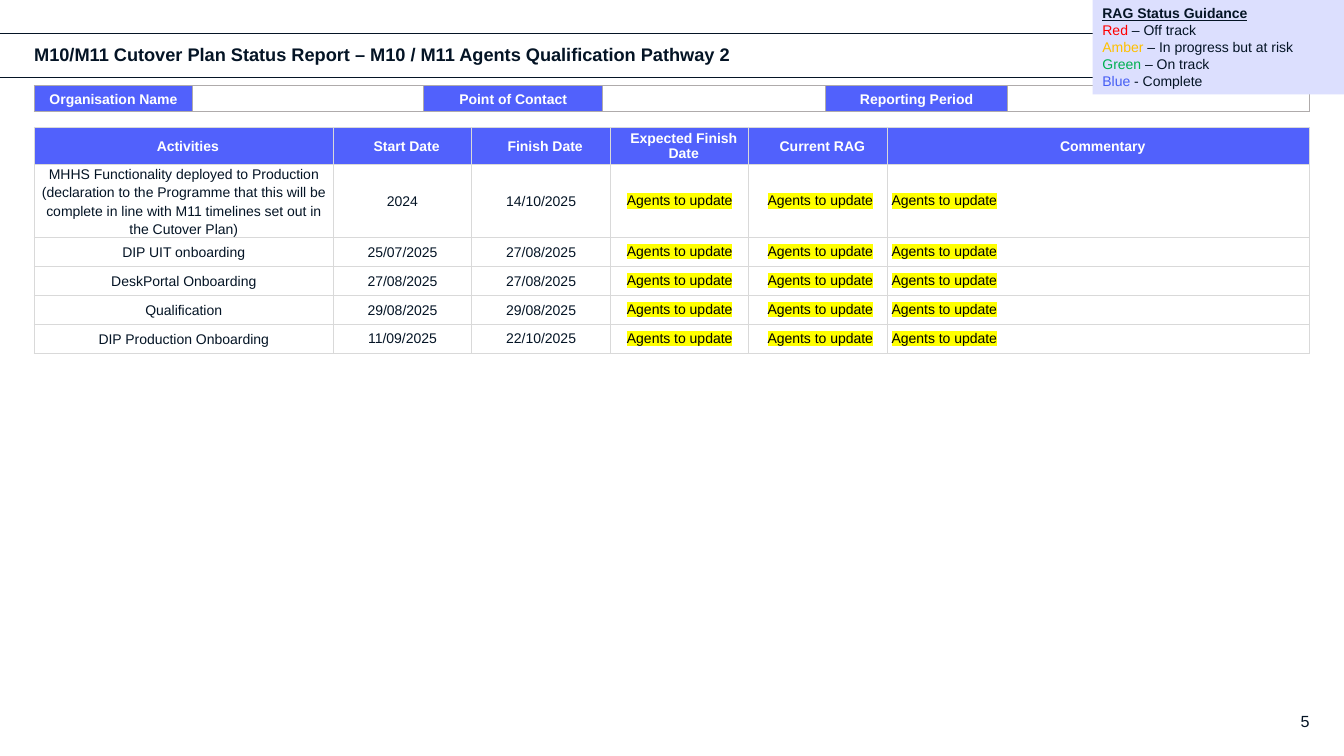
from lxml.etree import SubElement
from pptx import Presentation
from pptx.dml.color import RGBColor
from pptx.enum.shapes import MSO_CONNECTOR, MSO_SHAPE
from pptx.enum.text import MSO_ANCHOR, MSO_AUTO_SIZE, PP_ALIGN
from pptx.oxml.ns import qn
from pptx.util import Pt

HUES = {
    "ink": "041425", "white": "FFFFFF", "black": "000000", "blue": "5161FC",
    "pale": "DCDFFE", "mark": "FFFF00", "grid": "D9D9D9", "edge": "AFABAB",
    "Red": "FF0000", "Amber": "FFC000", "Green": "00B050", "Blue": "455DF4",
}
LEFT = 24.4


def write(para, text, size=10, hue="ink", bold=False, under=False, mark=None,
          align=PP_ALIGN.LEFT, space=None, after=0, indent=0):
    para.alignment = align
    para.space_after = Pt(after)
    if space:
        para.line_spacing = space
    if indent:
        para._p.get_or_add_pPr().set("marL", str(Pt(indent)))
    if not text:
        SubElement(para._p, qn("a:endParaRPr"), sz=str(size * 100))
        return
    run = para.add_run()
    run.text = text
    font = run.font
    font.size, font.bold, font.underline = Pt(size), bold, under
    font.color.rgb = RGBColor.from_string(HUES[hue])
    if mark:
        light = SubElement(run._r.rPr, qn("a:highlight"))
        SubElement(light, qn("a:srgbClr"), val=HUES[mark])
    font.name = "Arial"


def dress(cell, fill, edge, pads):
    cell.vertical_anchor = MSO_ANCHOR.MIDDLE
    left, top, right, base = pads
    cell.margin_left, cell.margin_top = Pt(left), Pt(top)
    cell.margin_right, cell.margin_bottom = Pt(right), Pt(base)
    props = cell._tc.get_or_add_tcPr()
    for side in "LRTB":
        line = SubElement(props, qn(f"a:ln{side}"), w=str(Pt(0.75)))
        paint = SubElement(line, qn("a:solidFill"))
        SubElement(paint, qn("a:srgbClr"), val=HUES[edge])
    cell.fill.solid()
    cell.fill.fore_color.rgb = RGBColor.from_string(HUES[fill])


deck = Presentation()
deck.slide_width, deck.slide_height = Pt(960), Pt(540)
slide = deck.slides.add_slide(deck.slide_layouts[5])
shapes = slide.shapes

for y in (24, 55.4):
    rule = shapes.add_connector(MSO_CONNECTOR.STRAIGHT, Pt(0), Pt(y), Pt(960), Pt(y))
    rule.line.width = Pt(0.5)
    rule.line.color.rgb = RGBColor.from_string(HUES["ink"])
    SubElement(rule._element.spPr, qn("a:effectLst"))

title = shapes.title
title.left, title.top, title.width, title.height = Pt(LEFT), Pt(31.4), Pt(553), Pt(16.6)
number = shapes.add_textbox(Pt(719.5), Pt(500.4), Pt(216), Pt(28.8))
for box in (title, number):
    frame = box.text_frame
    frame.word_wrap = True
    frame.auto_size = MSO_AUTO_SIZE.NONE
    frame.vertical_anchor = MSO_ANCHOR.MIDDLE
    frame.margin_left = frame.margin_top = frame.margin_right = frame.margin_bottom = 0
write(title.text_frame.paragraphs[0],
      "M10/M11 Cutover Plan Status Report – M10 / M11 Agents Qualification Pathway 2",
      size=13, bold=True, space=0.9)
write(number.text_frame.paragraphs[0], "5", size=11.5, align=PP_ALIGN.RIGHT)

heads = ["Activities", "Start Date", "Finish Date", "Expected Finish Date",
         "Current RAG", "Commentary"]
tasks = [
    ("MHHS Functionality deployed to Production (declaration to the Programme that "
     "this will be complete in line with M11 timelines set out in the Cutover Plan)",
     "2024", "14/10/2025"),
    ("DIP UIT onboarding", "25/07/2025", "27/08/2025"),
    ("DeskPortal Onboarding", "27/08/2025", "27/08/2025"),
    ("Qualification", "29/08/2025", "29/08/2025"),
    ("DIP Production Onboarding", "11/09/2025", "22/10/2025"),
]
facts = ["Organisation Name", "", "Point of Contact", "", "Reporting Period", ""]

tables = []
for top, wides, highs in (
    (90.9, [213.6, 99, 99, 99, 99, 301.5], [26.5, 52] + [20.7] * 4),
    (61.2, [113.2, 165, 127.9, 159, 130.4, 215.6], [18.7]),
):
    table = shapes.add_table(len(highs), len(wides), Pt(LEFT), Pt(top),
                             Pt(sum(wides)), Pt(sum(highs))).table
    table.first_row = table.horz_banding = False
    for col, wide in zip(table.columns, wides):
        col.width = Pt(wide)
    for row, high in zip(table.rows, highs):
        row.height = Pt(high)
    tables.append(table)
plan, info = tables

mid = PP_ALIGN.CENTER
main = dict(align=mid, space=Pt(13), after=6)
date = dict(align=mid, space=1.07)
todo = dict(hue="black", mark="mark", after=2)
forms = [main, date, date, dict(todo, align=mid), dict(todo, align=mid), todo]
pads = [(5, 0, 5, 0)] * 3 + [(3.6, 3.6, 3.6, 3.6)] + [(2.9, 2.9, 0, 2.9)] * 2

for c, head in enumerate(heads):
    cell = plan.cell(0, c)
    dress(cell, "blue", "grid", (0.7, 0.7, 0.7, 0))
    write(cell.text_frame.paragraphs[0], head, hue="white", bold=True,
          align=mid, indent=5.8)

for r, task in enumerate(tasks, 1):
    for c, text in enumerate(task + ("Agents to update",) * 3):
        cell = plan.cell(r, c)
        dress(cell, "white", "grid", pads[c])
        write(cell.text_frame.paragraphs[0], text, **forms[c])

for c, text in enumerate(facts):
    cell = info.cell(0, c)
    dress(cell, "blue" if text else "white", "edge", (7.2, 3.3, 7.2, 3.3))
    write(cell.text_frame.paragraphs[0], text, hue="white", bold=True,
          align=mid, space=Pt(12))

guide = shapes.add_shape(MSO_SHAPE.RECTANGLE, Pt(780.4), Pt(0), Pt(179.6), Pt(67.5))
guide.shadow.inherit = False
guide.fill.solid()
guide.fill.fore_color.rgb = RGBColor.from_string(HUES["pale"])
guide.line.fill.background()
frame = guide.text_frame
frame.word_wrap = True
frame.vertical_anchor = MSO_ANCHOR.TOP
write(frame.paragraphs[0], "RAG Status Guidance", bold=True, under=True, space=Pt(12))
for name, sense in (("Red", " – Off track"), ("Amber", " – In progress but at risk"),
                    ("Green", " – On track"), ("Blue", " - Complete")):
    para = frame.add_paragraph()
    write(para, name, hue=name, space=Pt(12))
    write(para, sense, space=Pt(12))

deck.save("out.pptx")
